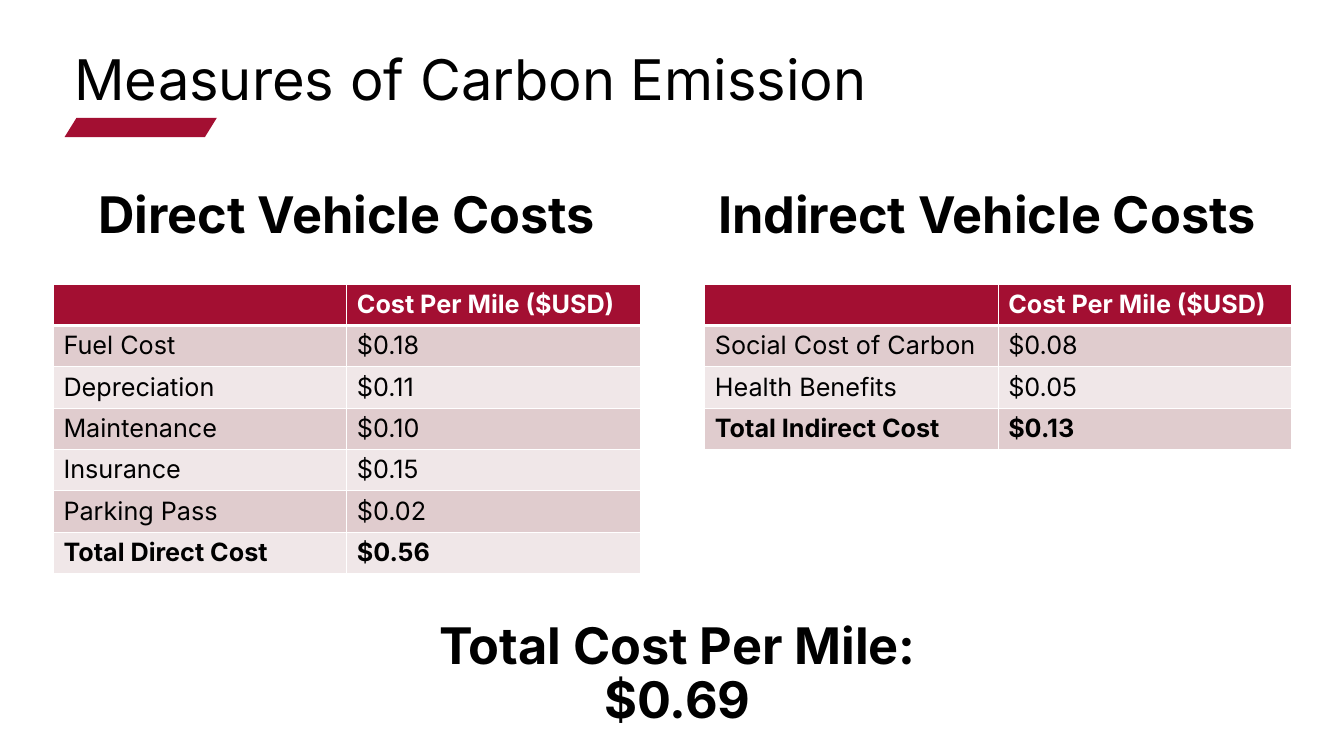
from dataclasses import dataclass

import pptx
import pptx.dml.color
import pptx.enum.shapes
import pptx.enum.text
import pptx.oxml
import pptx.oxml.ns
import pptx.util
from pptx.util import Inches

FONT = "Inter"
COLORS = {
    "crimson": "A30F32",
    "band_dark": "E0CCCE",
    "band_light": "F0E7E8",
    "black": "000000",
    "white": "FFFFFF",
}
COLUMN_WIDTH = 2.91
ROW_HEIGHT = 0.41
TABLE_TOP = 2.82
HEADING_TOP = 1.84


@dataclass(frozen=True)
class Heading:
    text: str
    left: float
    top: float
    width: float = 5.6
    height: float = 0.92
    size: int = 36
    bold: bool = True
    centered: bool = True


@dataclass(frozen=True)
class CostTable:
    left: float
    costs: tuple[tuple[str, str], ...]


HEADINGS = (
    Heading("Measures of Carbon Emission", 0.64, 0.47, 12.16, 0.55,
            size=40, bold=False, centered=False),
    Heading("Direct Vehicle Costs", 0.64, HEADING_TOP),
    Heading("Indirect Vehicle Costs", 6.99, HEADING_TOP),
    Heading("Total Cost Per Mile: $0.69", 3.92, 6.11),
)
COST_TABLES = (
    CostTable(0.53, (
        ("Fuel Cost", "$0.18"),
        ("Depreciation", "$0.11"),
        ("Maintenance", "$0.10"),
        ("Insurance", "$0.15"),
        ("Parking Pass", "$0.02"),
        ("Total Direct Cost", "$0.56"),
    )),
    CostTable(6.99, (
        ("Social Cost of Carbon", "$0.08"),
        ("Health Benefits", "$0.05"),
        ("Total Indirect Cost", "$0.13"),
    )),
)


def rgb(name: str) -> pptx.dml.color.RGBColor:
    return pptx.dml.color.RGBColor.from_string(COLORS[name])


def write(frame, text: str, *, size: int = 18, color: str = "black",
          bold: bool = False, centered: bool = False,
          line_spacing: float | None = None) -> None:
    paragraph = frame.paragraphs[0]
    if centered:
        paragraph.alignment = pptx.enum.text.PP_ALIGN.CENTER
    if line_spacing:
        paragraph.line_spacing = line_spacing
    font = paragraph.font
    if text:
        run = paragraph.add_run()
        run.text = text
        font = run.font
    font.name = FONT
    font.size = pptx.util.Pt(size)
    font.bold = bold
    font.color.rgb = rgb(color)


def set_borders(cell, top: int, bottom: int) -> None:
    """Draw white cell edges; top and bottom widths are in points."""
    properties = cell._tc.get_or_add_tcPr()
    for side, points in (("L", 1), ("R", 1), ("T", top), ("B", bottom)):
        properties.append(pptx.oxml.parse_xml(
            f'<a:ln{side} {pptx.oxml.ns.nsdecls("a")} w="{pptx.util.Pt(points)}">'
            f'<a:solidFill><a:srgbClr val="{COLORS["white"]}"/></a:solidFill>'
            f'</a:ln{side}>'))


def add_heading(slide, heading: Heading) -> None:
    box = slide.shapes.add_textbox(
        Inches(heading.left), Inches(heading.top),
        Inches(heading.width), Inches(heading.height))
    box.text_frame.word_wrap = True
    write(box.text_frame, heading.text, size=heading.size, bold=heading.bold,
          centered=heading.centered, line_spacing=0.9)


def add_cost_table(slide, cost_table: CostTable) -> None:
    rows = (("", "Cost Per Mile ($USD)"), *cost_table.costs)
    table = slide.shapes.add_table(
        len(rows), 2, Inches(cost_table.left), Inches(TABLE_TOP),
        Inches(2 * COLUMN_WIDTH), Inches(ROW_HEIGHT * len(rows))).table
    for column in table.columns:
        column.width = Inches(COLUMN_WIDTH)
    for index, row in enumerate(rows):
        header, total = index == 0, index == len(rows) - 1
        band = "band_dark" if index % 2 else "band_light"
        for cell, text in zip(table.rows[index].cells, row):
            set_borders(cell, top=3 if index == 1 else 1, bottom=3 if header else 1)
            cell.fill.solid()
            cell.fill.fore_color.rgb = rgb("crimson" if header else band)
            write(cell.text_frame, text, bold=header or total,
                  color="white" if header else "black")


def add_title_accent(slide) -> None:
    accent = slide.shapes.add_shape(
        pptx.enum.shapes.MSO_SHAPE.PARALLELOGRAM,
        Inches(0.64), Inches(1.17), Inches(1.51), Inches(0.19))
    accent.adjustments[0] = 0.62
    accent.rotation = 180
    accent.shadow.inherit = False
    accent.fill.solid()
    accent.fill.fore_color.rgb = rgb("crimson")
    accent.line.fill.background()


def main() -> None:
    presentation = pptx.Presentation()
    presentation.slide_width = Inches(13.33)
    presentation.slide_height = Inches(7.5)
    slide = presentation.slides.add_slide(presentation.slide_layouts[6])
    add_title_accent(slide)
    for cost_table in COST_TABLES:
        add_cost_table(slide, cost_table)
    for heading in HEADINGS:
        add_heading(slide, heading)
    presentation.save("out.pptx")


if __name__ == "__main__":
    main()
